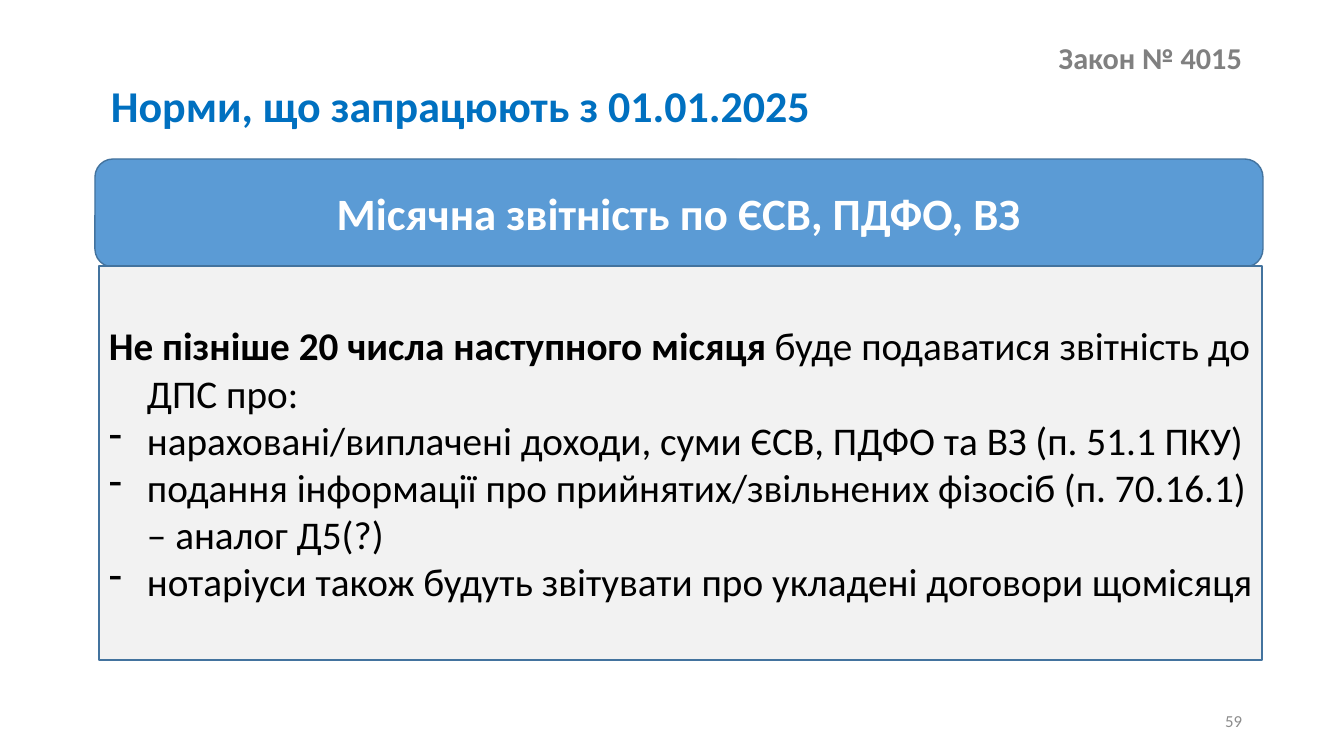
"""Build the slide on monthly reporting rules effective from 01.01.2025."""
from lxml import etree
from pptx import Presentation
from pptx.dml.color import RGBColor
from pptx.enum.shapes import MSO_SHAPE
from pptx.enum.text import MSO_ANCHOR, PP_ALIGN
from pptx.oxml.ns import qn
from pptx.util import Pt

PX = 12192000 / 1344
FONT = "Calibri"
ROUNDED, RECTANGLE = MSO_SHAPE.ROUNDED_RECTANGLE, MSO_SHAPE.RECTANGLE
TOP, MIDDLE = MSO_ANCHOR.TOP, MSO_ANCHOR.MIDDLE
LEFT, CENTER, RIGHT = PP_ALIGN.LEFT, PP_ALIGN.CENTER, PP_ALIGN.RIGHT
BLACK = RGBColor(0x00, 0x00, 0x00)
WHITE = RGBColor(0xFF, 0xFF, 0xFF)
GRAY = RGBColor(0x80, 0x80, 0x80)
NUMBER_GRAY = RGBColor(0x8C, 0x8C, 0x8C)
HEADING_BLUE = RGBColor(0x00, 0x70, 0xC0)
BANNER_BLUE = RGBColor(0x5B, 0x9B, 0xD5)
OUTLINE_BLUE = RGBColor(0x43, 0x73, 0x9E)
PANEL_GRAY = RGBColor(0xF2, 0xF2, 0xF2)


def px(*lengths):
    return [round(length * PX) for length in lengths]


def add_run(paragraph, text, size, color, bold=False):
    run = paragraph.add_run()
    run.text = text
    run.font.name = FONT
    run.font.size = Pt(size)
    run.font.bold = bold
    run.font.color.rgb = color


prs = Presentation()
prs.slide_width, prs.slide_height = px(1344, 756)
slide = prs.slides.add_slide(prs.slide_layouts[6])

captions = [
    ((1025, 40, 227, 39), "Закон № 4015", 21.6, GRAY, True, RIGHT, MIDDLE, 0.9),
    ((101, 88, 1151, 50), "Норми, що запрацюють з 01.01.2025", 31.4, HEADING_BLUE, True, LEFT, TOP, 0.7),
    ((950, 701, 302, 40), "59", 12, NUMBER_GRAY, False, RIGHT, MIDDLE, 1.0),
]
for box, text, size, color, bold, align, anchor, spacing in captions:
    caption = slide.shapes.add_textbox(*px(*box)).text_frame
    caption.word_wrap = True
    caption.vertical_anchor = anchor
    paragraph = caption.paragraphs[0]
    paragraph.alignment = align
    paragraph.line_spacing = spacing
    add_run(paragraph, text, size, color, bold)

blocks = []
for preset, box, fill in [
    (ROUNDED, (95, 159, 1168, 108), BANNER_BLUE),
    (RECTANGLE, (99, 266, 1163, 394), PANEL_GRAY),
]:
    block = slide.shapes.add_shape(preset, *px(*box))
    block.shadow.inherit = False
    block.fill.solid()
    block.fill.fore_color.rgb = fill
    block.line.color.rgb = OUTLINE_BLUE
    block.line.width = Pt(1)
    block.text_frame.word_wrap = True
    block.text_frame.vertical_anchor = MIDDLE
    blocks.append(block.text_frame)
banner, rules = blocks

banner.paragraphs[0].alignment = CENTER
add_run(banner.paragraphs[0], "Місячна звітність по ЄСВ, ПДФО, ВЗ", 32, WHITE, True)

deadline = rules.paragraphs[0]
add_run(deadline, "Не пізніше 20 числа наступного місяця ", 28, BLACK, True)
add_run(deadline, "буде подаватися звітність до ДПС про:", 28, BLACK)
for item in [
    "нараховані/виплачені доходи, суми ЄСВ, ПДФО та ВЗ (п. 51.1 ПКУ)",
    "подання інформації про прийнятих/звільнених фізосіб (п. 70.16.1) – аналог Д5(?)",
    "нотаріуси також будуть звітувати про укладені договори щомісяця",
]:
    add_run(rules.add_paragraph(), item, 28, BLACK)

hanging = px(38)[0]
for paragraph in rules.paragraphs:
    paragraph.alignment = LEFT
    properties = paragraph._p.get_or_add_pPr()
    properties.set("marL", str(hanging))
    properties.set("indent", str(-hanging))
    if paragraph is not deadline and paragraph._p is not deadline._p:
        etree.SubElement(properties, qn("a:buFontTx"))
        etree.SubElement(properties, qn("a:buChar")).set("char", "-")

prs.save("out.pptx")
